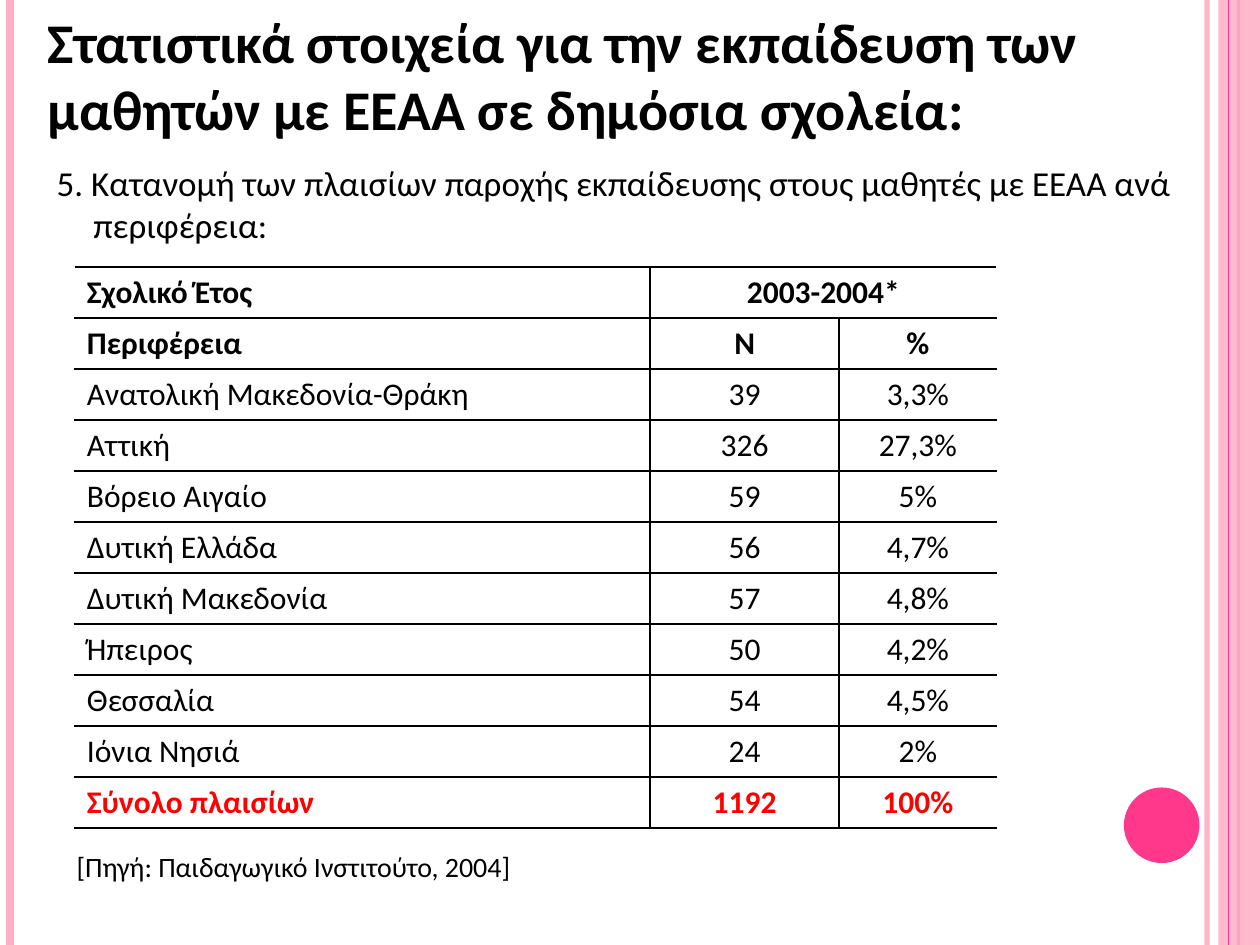
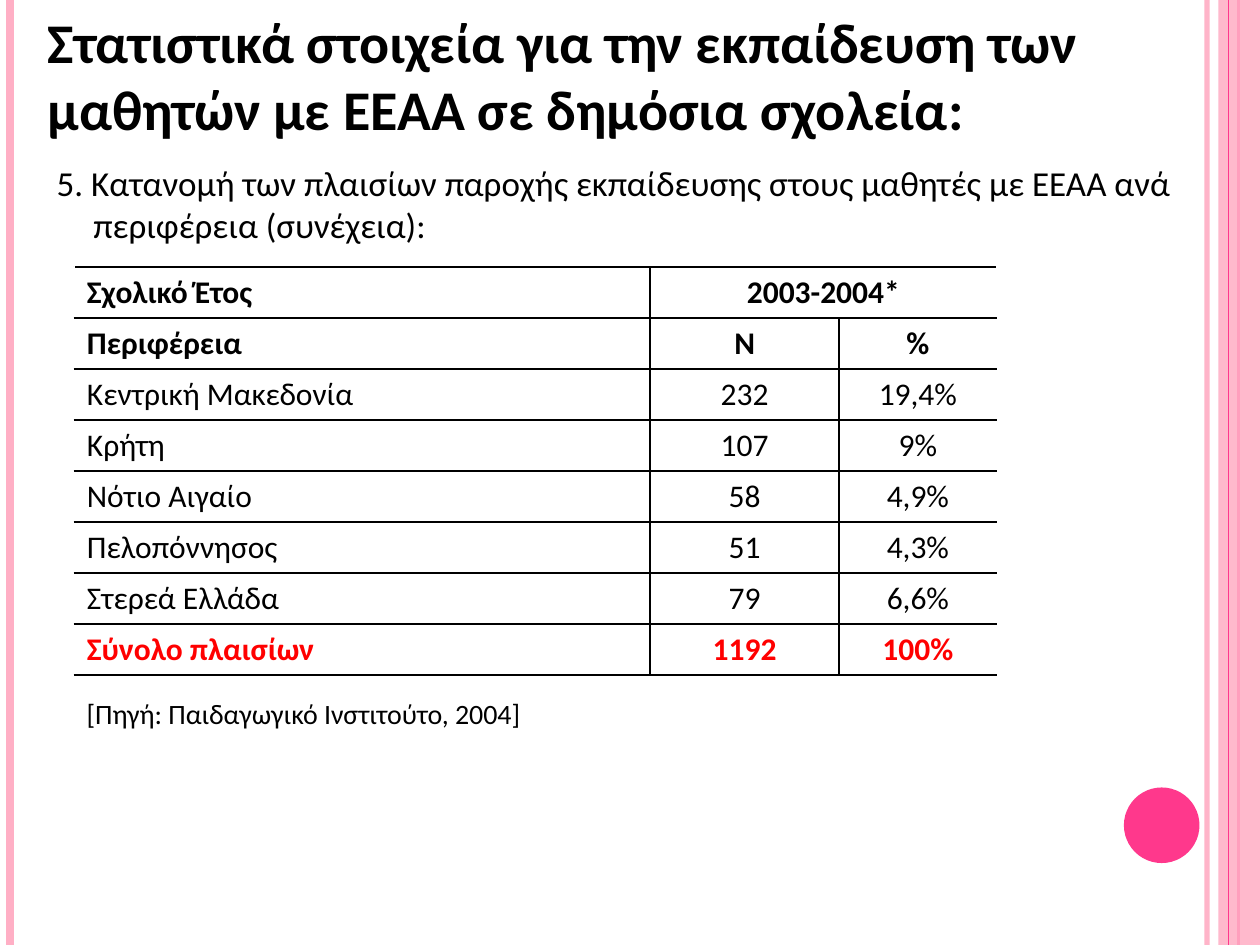
from dataclasses import dataclass
from typing import Any

from lxml import etree
from pptx import Presentation
from pptx.dml.color import RGBColor
from pptx.enum.shapes import MSO_CONNECTOR, MSO_SHAPE
from pptx.enum.text import MSO_ANCHOR, MSO_AUTO_SIZE, PP_ALIGN
from pptx.oxml.ns import qn
from pptx.util import Inches, Pt

LEFT, CENTER = PP_ALIGN.LEFT, PP_ALIGN.CENTER
TOP, MIDDLE = MSO_ANCHOR.TOP, MSO_ANCHOR.MIDDLE
GROW = MSO_AUTO_SIZE.SHAPE_TO_FIT_TEXT
STRAIGHT = MSO_CONNECTOR.STRAIGHT
RECTANGLE, OVAL = MSO_SHAPE.RECTANGLE, MSO_SHAPE.OVAL

BLACK = RGBColor(0x00, 0x00, 0x00)
WHITE = RGBColor(0xFF, 0xFF, 0xFF)
RED = RGBColor(0xFF, 0x00, 0x00)
PINK = RGBColor(0xFF, 0xAF, 0xC5)
MAGENTA = RGBColor(0xFF, 0x38, 0x8C)

SLIDE_WIDTH, SLIDE_HEIGHT = Inches(10), Inches(7.5)
GRID_COLUMNS, GRID_ROWS = 100, 75
COLUMN = SLIDE_WIDTH / GRID_COLUMNS
ROW = SLIDE_HEIGHT / GRID_ROWS

FONT = "Calibri"
TITLE_FONT = {"name": FONT, "size": Pt(32), "bold": True}
BODY_FONT = {"name": FONT, "size": Pt(20), "bold": False}
CELL_FONT = {"name": FONT, "size": Pt(18), "bold": False}
STRONG_FONT = {**CELL_FONT, "bold": True}
SOURCE_FONT = {"name": FONT, "size": Pt(16), "bold": False}
FRAME_FORMAT = {"word_wrap": True, "auto_size": GROW}
PLAIN_TABLE = {"first_row": False, "horz_banding": False}


@dataclass(frozen=True)
class Box:
    column: float
    row: float
    columns: float
    rows: float

    def lengths(self) -> tuple[int, int, int, int]:
        return (round(self.column * COLUMN), round(self.row * ROW),
                round(self.columns * COLUMN), round(self.rows * ROW))


@dataclass(frozen=True)
class Stripe:
    column: float
    points: float
    color: RGBColor
    opacity: int = 100


@dataclass(frozen=True)
class Block:
    preset: MSO_SHAPE
    box: Box
    color: RGBColor
    opacity: int = 100


@dataclass(frozen=True)
class RegionSlide:
    body: str
    regions: list[tuple[str, str, str]]
    source_column: float


DECORATIONS = [
    Stripe(95.8, 3, PINK, 93),
    Stripe(0.8, 4.5, PINK),
    Stripe(98.3, 1.5, MAGENTA),
    Block(RECTANGLE, Box(96.7, 0, 3.3, GRID_ROWS), PINK, 87),
    Stripe(97.5, 0.75, MAGENTA),
    Block(OVAL, Box(89.2, 62.5, 6, 6), MAGENTA),
]

TITLE_BOX = Box(2.8, 0, 91.3, 11.8)
BODY_BOX = Box(3.5, 12.3, 91.3, 7.7)
BODY_INDENT = round(2.9 * COLUMN)
TABLE_COLUMN, TABLE_ROW = 5.9, 21.2
TABLE_COLUMNS = (45.7, 15, 12.5)
CELL_ROWS = 4.05
SOURCE_GAP = 1.15

TITLE = "Στατιστικά στοιχεία για την εκπαίδευση των μαθητών με ΕΕΑΑ σε δημόσια σχολεία:"
BODY = "5. Κατανομή των πλαισίων παροχής εκπαίδευσης στους μαθητές με ΕΕΑΑ ανά περιφέρεια"
SOURCE = "[Πηγή: Παιδαγωγικό Ινστιτούτο, 2004]"
HEADINGS = [("Σχολικό Έτος", "2003-2004*", ""), ("Περιφέρεια", "Ν", "%")]
TOTAL = ("Σύνολο πλαισίων", "1192", "100%")

REGION_SLIDES = [
    RegionSlide(f"{BODY}:", [
        ("Ανατολική Μακεδονία-Θράκη", "39", "3,3%"),
        ("Αττική", "326", "27,3%"),
        ("Βόρειο Αιγαίο", "59", "5%"),
        ("Δυτική Ελλάδα", "56", "4,7%"),
        ("Δυτική Μακεδονία", "57", "4,8%"),
        ("Ήπειρος", "50", "4,2%"),
        ("Θεσσαλία", "54", "4,5%"),
        ("Ιόνια Νησιά", "24", "2%"),
    ], 5.1),
    RegionSlide(f"{BODY} (συνέχεια):", [
        ("Κεντρική Μακεδονία", "232", "19,4%"),
        ("Κρήτη", "107", "9%"),
        ("Νότιο Αιγαίο", "58", "4,9%"),
        ("Πελοπόννησος", "51", "4,3%"),
        ("Στερεά Ελλάδα", "79", "6,6%"),
    ], 5.9),
]


def apply(target: Any, values: dict[str, Any]) -> None:
    for name, value in values.items():
        setattr(target, name, value)


def place(shape: Any, box: Box) -> None:
    apply(shape, dict(zip(("left", "top", "width", "height"), box.lengths())))


def write(frame: Any, text: str, font: dict[str, Any], color: RGBColor = BLACK,
          alignment: PP_ALIGN = LEFT) -> Any:
    paragraph = frame.paragraphs[0]
    apply(paragraph, {"alignment": alignment, "space_before": Pt(0)})
    run = paragraph.add_run()
    run.text = text
    apply(run.font, font)
    run.font.color.rgb = color
    return paragraph


def set_opacity(properties: Any, percent: int) -> None:
    if percent < 100:
        for color in properties.iter(qn("a:srgbClr")):
            etree.SubElement(color, qn("a:alpha"), val=str(percent * 1000))


def draw_stripe(slide: Any, stripe: Stripe) -> Any:
    position = round(stripe.column * COLUMN)
    connector = slide.shapes.add_connector(STRAIGHT, position, 0, position, SLIDE_HEIGHT)
    connector.line.color.rgb = stripe.color
    connector.line.width = Pt(stripe.points)
    properties = connector._element.spPr
    set_opacity(properties, stripe.opacity)
    etree.SubElement(properties, qn("a:effectLst"))
    return connector


def draw_block(slide: Any, block: Block) -> Any:
    shape = slide.shapes.add_shape(block.preset, *block.box.lengths())
    shape.shadow.inherit = False
    shape.fill.solid()
    shape.fill.fore_color.rgb = block.color
    shape.line.fill.background()
    set_opacity(shape._element.spPr, block.opacity)
    return shape


def decorate_layout(layout: Any, slide: Any) -> None:
    for number, decoration in enumerate(DECORATIONS, start=100):
        draw = draw_stripe if isinstance(decoration, Stripe) else draw_block
        element = draw(slide, decoration)._element
        element.xpath("./*/p:cNvPr")[0].set("id", str(number))
        layout.shapes.element.append(element)


def fill_placeholders(slide: Any, body_text: str) -> None:
    title, body = slide.shapes.title, slide.placeholders[1]
    place(title, TITLE_BOX)
    apply(title.text_frame, {**FRAME_FORMAT, "vertical_anchor": MIDDLE})
    write(title.text_frame, TITLE, TITLE_FONT)
    place(body, BODY_BOX)
    apply(body.text_frame, {**FRAME_FORMAT, "vertical_anchor": TOP})
    properties = write(body.text_frame, body_text, BODY_FONT)._p.get_or_add_pPr()
    properties.set("marL", str(BODY_INDENT))
    properties.set("indent", str(-BODY_INDENT))
    etree.SubElement(properties, qn("a:buNone"))


def set_borders(cell: Any, left: RGBColor, right: RGBColor) -> None:
    properties = cell._tc.get_or_add_tcPr()
    for side, color in zip("LRTB", (left, right, BLACK, BLACK)):
        line = etree.SubElement(properties, qn(f"a:ln{side}"), w=str(Pt(1)))
        fill = etree.SubElement(line, qn("a:solidFill"))
        etree.SubElement(fill, qn("a:srgbClr"), val=str(color))


def draw_table(slide: Any, regions: list[tuple[str, str, str]]) -> Any:
    records = [*HEADINGS, *regions, TOTAL]
    box = Box(TABLE_COLUMN, TABLE_ROW, sum(TABLE_COLUMNS), CELL_ROWS * len(records))
    frame = slide.shapes.add_table(len(records), len(TABLE_COLUMNS), *box.lengths())
    table = frame.table
    apply(table, PLAIN_TABLE)
    for column, width in zip(table.columns, TABLE_COLUMNS):
        column.width = round(width * COLUMN)
    for row, record in enumerate(records):
        is_total = record is TOTAL
        font = STRONG_FONT if is_total or row < len(HEADINGS) else CELL_FONT
        edges = (WHITE, BLACK, BLACK if row else WHITE, WHITE)
        for column, text in enumerate(record):
            cell = table.cell(row, column)
            set_borders(cell, edges[column], edges[column + 1])
            cell.fill.background()
            if text:
                write(cell.text_frame, text, font, RED if is_total else BLACK,
                      CENTER if column else LEFT)
    table.cell(0, 1).merge(table.cell(0, 2))
    return frame


def draw_source(slide: Any, column: float, table_frame: Any) -> None:
    row = (table_frame.top + table_frame.height) / ROW + SOURCE_GAP
    text_box = slide.shapes.add_textbox(*Box(column, row, 91.3, 3.7).lengths())
    apply(text_box.text_frame, FRAME_FORMAT)
    write(text_box.text_frame, SOURCE, SOURCE_FONT)


def main() -> None:
    presentation = Presentation()
    apply(presentation, {"slide_width": SLIDE_WIDTH, "slide_height": SLIDE_HEIGHT})
    layout = presentation.slide_layouts[1]
    for index, content in enumerate(REGION_SLIDES):
        slide = presentation.slides.add_slide(layout)
        if index == 0:
            decorate_layout(layout, slide)
        fill_placeholders(slide, content.body)
        table_frame = draw_table(slide, content.regions)
        draw_source(slide, content.source_column, table_frame)
    presentation.save("out.pptx")


if __name__ == "__main__":
    main()
